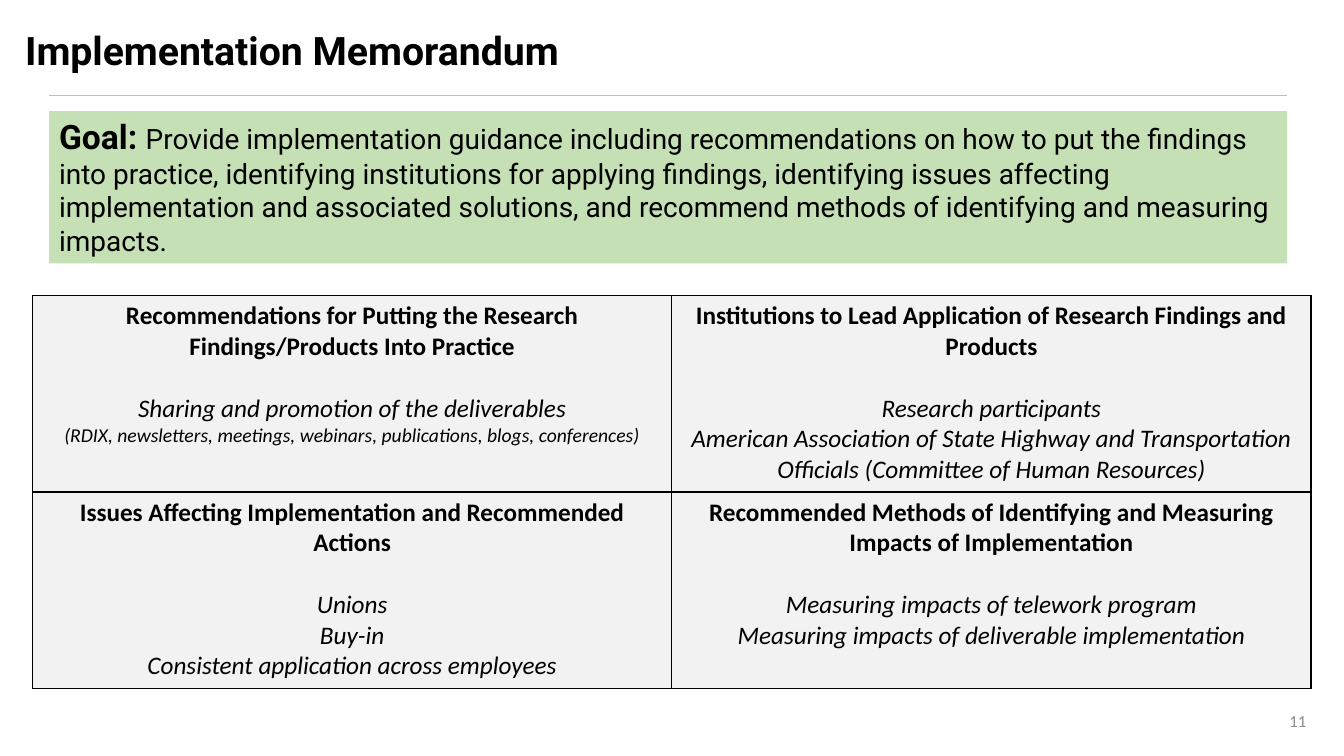
from lxml import etree
from pptx import Presentation
from pptx.dml.color import RGBColor
from pptx.enum.shapes import MSO_CONNECTOR, MSO_SHAPE
from pptx.enum.text import MSO_ANCHOR, PP_ALIGN
from pptx.oxml.ns import qn
from pptx.util import Cm, Pt

BLACK = RGBColor(0x00, 0x00, 0x00)
GREEN = RGBColor(0xC5, 0xE0, 0xB4)
PALE = RGBColor(0xF2, 0xF2, 0xF2)
RULE = RGBColor(0xBC, 0xBE, 0xC0)
GREY = RGBColor(0x8C, 0x8C, 0x8C)
LEFT, CENTER, RIGHT = PP_ALIGN.LEFT, PP_ALIGN.CENTER, PP_ALIGN.RIGHT
TOP, MIDDLE = MSO_ANCHOR.TOP, MSO_ANCHOR.MIDDLE
RECT, STRAIGHT = MSO_SHAPE.RECTANGLE, MSO_CONNECTOR.STRAIGHT

TITLE = dict(name="Roboto", size=Pt(28), bold=True)
LABEL = dict(name="Roboto", size=Pt(24), bold=True)
GOAL = dict(name="Roboto", size=Pt(20), bold=False)
HEAD = dict(name="Calibri", size=Pt(18), bold=True, italic=False)
ITEM = dict(name="Calibri", size=Pt(18), bold=False, italic=True)
NOTE = dict(ITEM, size=Pt(14))
PAGE = dict(name="Calibri", size=Pt(12))

GOAL_TEXT = (
    "Provide implementation guidance including recommendations on how to put "
    "the findings into practice, identifying institutions for applying findings, "
    "identifying issues affecting implementation and associated solutions, and "
    "recommend methods of identifying and measuring impacts."
)
TOPICS = [
    [
        [("Recommendations for Putting the Research Findings/Products Into Practice", HEAD),
         ("Sharing and promotion of the deliverables", ITEM),
         ("(RDIX, newsletters, meetings, webinars, publications, blogs, conferences)", NOTE)],
        [("Institutions to Lead Application of Research Findings and Products", HEAD),
         ("Research participants", ITEM),
         ("American Association of State Highway and Transportation Officials "
          "(Committee of Human Resources)", ITEM)],
    ],
    [
        [("Issues Affecting Implementation and Recommended Actions", HEAD),
         ("Unions", ITEM),
         ("Buy-in", ITEM),
         ("Consistent application across employees", ITEM)],
        [("Recommended Methods of Identifying and Measuring Impacts of Implementation", HEAD),
         ("Measuring impacts of telework program", ITEM),
         ("Measuring impacts of deliverable implementation", ITEM)],
    ],
]


def add_run(para, text, form, color=BLACK):
    run = para.add_run()
    run.text = text
    for key, value in form.items():
        setattr(run.font, key, value)
    run.font.color.rgb = color


def add_title(slide, text, left, top, width, height):
    title = slide.shapes.title
    title.left, title.top, title.width, title.height = left, top, width, height
    frame = title.text_frame
    frame.vertical_anchor = MIDDLE
    para = frame.paragraphs[0]
    para.alignment, para.line_spacing = LEFT, 0.9
    add_run(para, text, TITLE)


def add_rule(slide, left, top, width):
    line = slide.shapes.add_connector(STRAIGHT, left, top, left + width, top)
    line.line.color.rgb = RULE
    line.line.width = Pt(0.5)
    etree.SubElement(line._element.spPr, qn("a:effectLst"))


def add_goal(slide, left, top, width, height):
    box = slide.shapes.add_shape(RECT, left, top, width, height)
    box.shadow.inherit = False
    box.fill.solid()
    box.fill.fore_color.rgb = GREEN
    box.line.fill.background()
    frame = box.text_frame
    frame.word_wrap, frame.vertical_anchor = True, TOP
    para = frame.paragraphs[0]
    para.alignment = LEFT
    add_run(para, "Goal: ", LABEL)
    add_run(para, GOAL_TEXT, GOAL)


def add_edges(cell):
    """Draw a thin black line on all four sides of the cell."""
    props = cell._tc.get_or_add_tcPr()
    for side in "LRTB":
        edge = etree.SubElement(props, qn(f"a:ln{side}"), w=str(Pt(1)))
        fill = etree.SubElement(edge, qn("a:solidFill"))
        etree.SubElement(fill, qn("a:srgbClr"), val=str(BLACK))


def fill_cell(cell, lines):
    add_edges(cell)
    cell.fill.solid()
    cell.fill.fore_color.rgb = PALE
    cell.vertical_anchor = TOP
    frame = cell.text_frame
    for i, (text, form) in enumerate(lines):
        para = frame.add_paragraph() if i else frame.paragraphs[0]
        para.alignment = CENTER
        if form is HEAD:
            para.space_after = Pt(22)
        add_run(para, text, form)


def add_grid(slide, left, top, width, height):
    rows, cols = len(TOPICS), len(TOPICS[0])
    table = slide.shapes.add_table(rows, cols, left, top, width, height).table
    table.first_row = table.horz_banding = False
    for r, row in enumerate(TOPICS):
        for c, lines in enumerate(row):
            fill_cell(table.cell(r, c), lines)


def add_page(slide, text, left, top, width, height):
    frame = slide.shapes.add_textbox(left, top, width, height).text_frame
    frame.word_wrap, frame.vertical_anchor = True, MIDDLE
    para = frame.paragraphs[0]
    para.alignment = RIGHT
    add_run(para, text, PAGE, GREY)


def main():
    deck = Presentation()
    deck.slide_width, deck.slide_height = Cm(33.87), Cm(19.05)
    slide = deck.slides.add_slide(deck.slide_layouts[5])
    edge, wide = Cm(1.24), Cm(31.2)
    add_title(slide, "Implementation Memorandum", Cm(0.38), Cm(0.3), Cm(33.48), Cm(2.08))
    add_rule(slide, edge, Cm(2.4), wide)
    add_goal(slide, edge, Cm(2.8), wide, Cm(3.84))
    add_grid(slide, Cm(0.82), Cm(7.45), Cm(32.22), Cm(9.9))
    add_page(slide, "11", Cm(26.47), Cm(17.65), Cm(6.7), Cm(1.02))
    deck.save("out.pptx")


if __name__ == "__main__":
    main()
